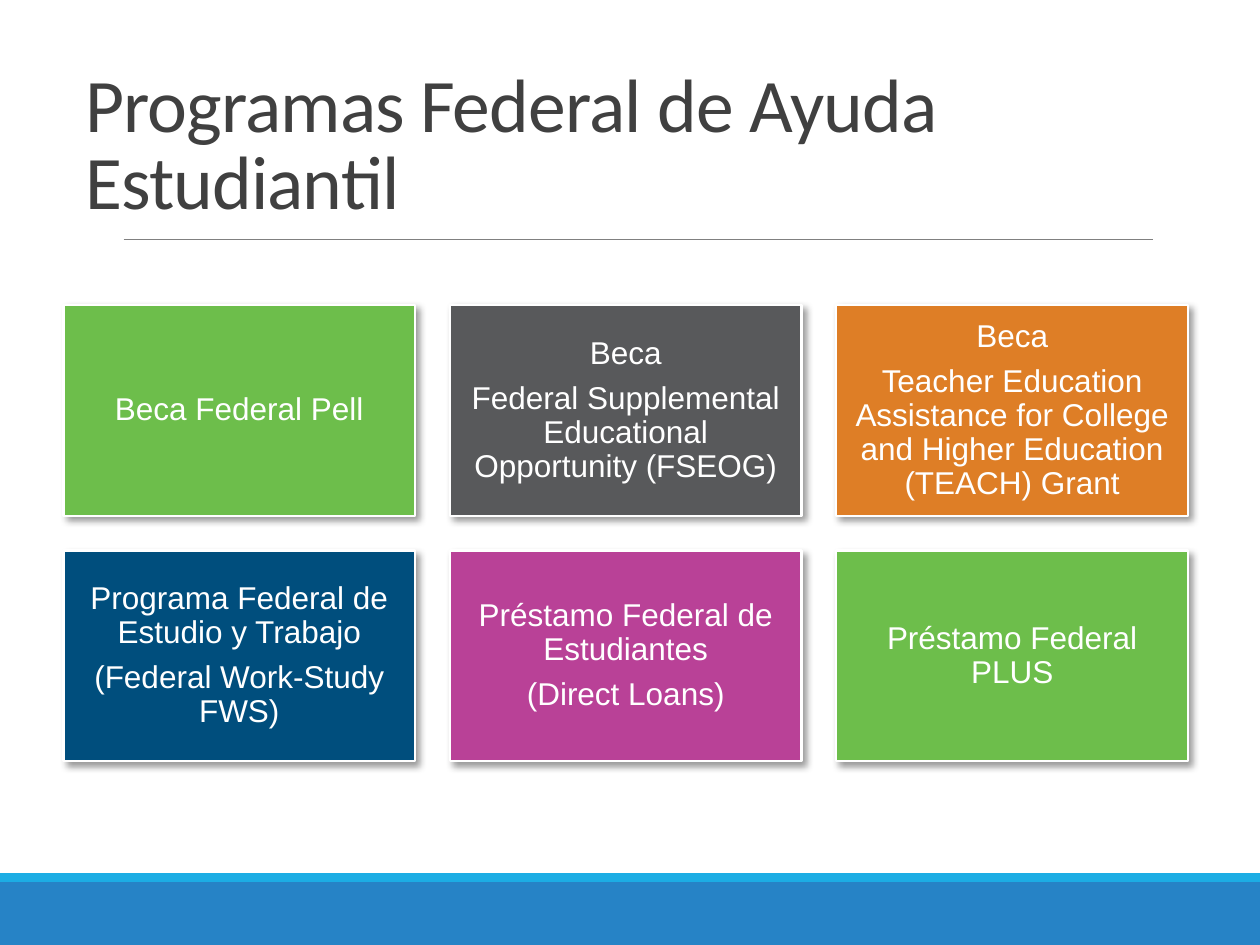
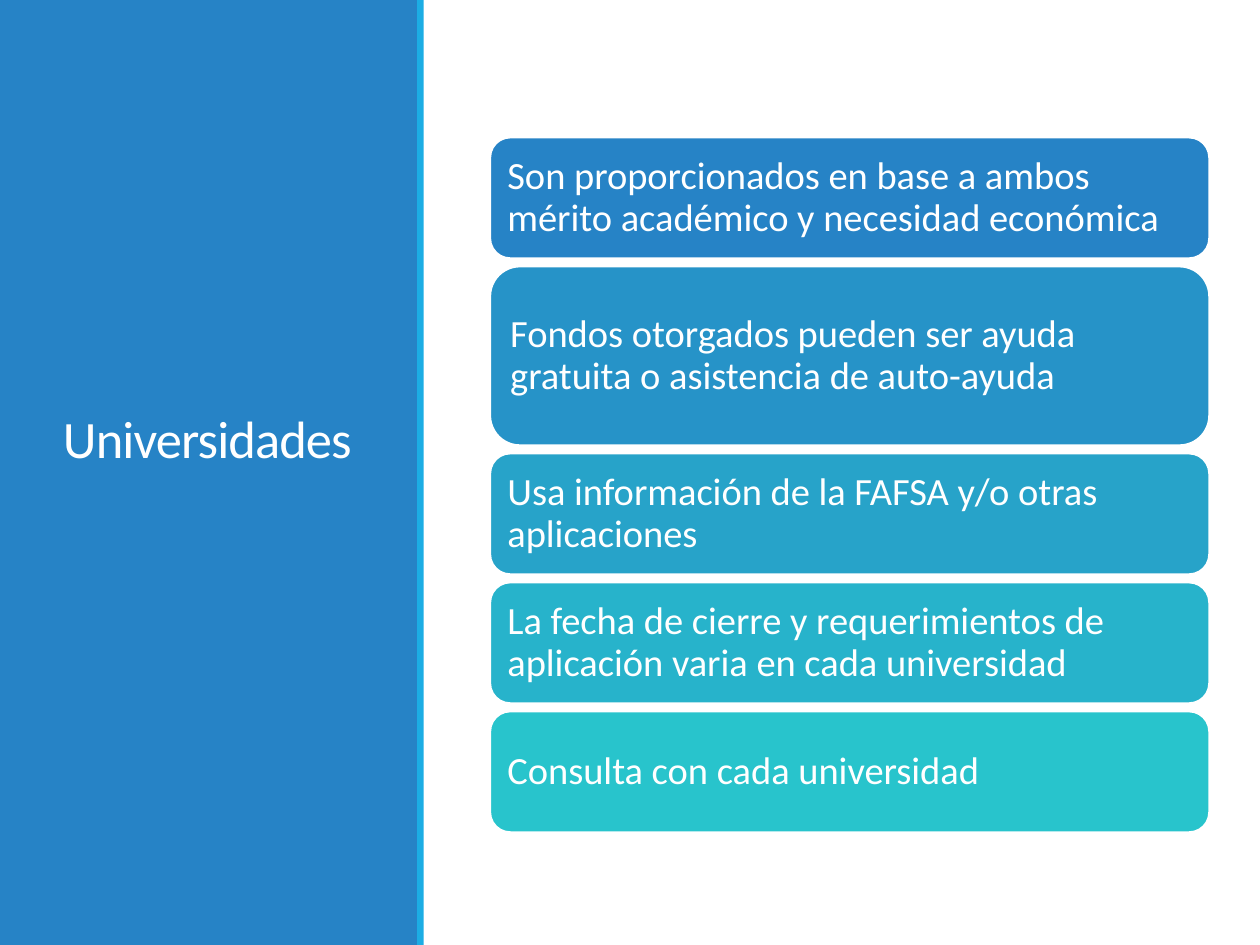
from lxml import etree
from pptx import Presentation, util as u
from pptx.dml.color import RGBColor
from pptx.enum import shapes, text
from pptx.oxml import ns

COLORS = {
    "white": "FFFFFF", "ink": "404040", "rule": "808080", "blue": "2683C6", "sky": "1CADE4",
    "green": "6DBE4B", "gray": "58595B", "orange": "DE7E26", "navy": "004E7D", "magenta": "B94197",
    "azure": "2693C8", "lagoon": "27A3C9", "turquoise": "27B3CB", "aqua": "28C4CC",
}
PAGE_WIDTH, PAGE_HEIGHT = 25.4, 19.05
EDGE_WIDTH = 1.25
SPACE_AFTER = 0.35

CARDS = [
    ("green", ["Beca Federal Pell"]),
    ("gray", ["Beca", "Federal Supplemental Educational Opportunity (FSEOG)"]),
    ("orange", ["Beca", "Teacher Education Assistance for College and Higher Education (TEACH) Grant"]),
    ("navy", ["Programa Federal de Estudio y Trabajo", "(Federal Work-Study FWS)"]),
    ("magenta", ["Préstamo Federal de Estudiantes", "(Direct Loans)"]),
    ("green", ["Préstamo Federal PLUS"]),
]
CARD_COLUMNS = 3
CARD_LEFT, CARD_TOP, CARD_WIDTH, CARD_HEIGHT, CARD_GAP = 1.28, 6.15, 7.09, 4.25, 0.7

PANEL_LEFT, PANEL_TOP, PANEL_WIDTH, PANEL_GAP = 9.88, 2.77, 14.5, 0.16
PANEL_HEIGHT, TALL_PANEL_HEIGHT = 2.44, 3.61
PANELS = [
    ("blue", PANEL_HEIGHT, "Son proporcionados en base a ambos mérito académico y necesidad económica"),
    ("azure", TALL_PANEL_HEIGHT, "Fondos otorgados pueden ser ayuda gratuita o asistencia de auto-ayuda"),
    ("lagoon", PANEL_HEIGHT, "Usa información de la FAFSA y/o otras aplicaciones"),
    ("turquoise", PANEL_HEIGHT, "La fecha de cierre y requerimientos de aplicación varia en cada universidad"),
    ("aqua", PANEL_HEIGHT, "Consulta con cada universidad"),
]


def rgb(name):
    return RGBColor.from_string(COLORS[name])


def write(box, lines, *, size, font="Calibri", color="white", align="LEFT", anchor="MIDDLE",
          spacing=0.9, tracking=None, after=SPACE_AFTER, insets=None):
    """Fill a shape with paragraphs; after is a share of the size, insets are left, top, right, bottom in cm."""
    frame = box.text_frame
    frame.word_wrap = True
    frame.vertical_anchor = text.MSO_ANCHOR[anchor]
    if insets:
        (frame.margin_left, frame.margin_top,
         frame.margin_right, frame.margin_bottom) = map(u.Cm, insets)
    for index, line in enumerate(lines):
        para = frame.add_paragraph() if index else frame.paragraphs[0]
        para.alignment = text.PP_ALIGN[align]
        para.line_spacing = spacing
        para.space_after = u.Pt(size * after)
        span = para.add_run()
        span.text = line
        span.font.size, span.font.name = u.Pt(size), font
        span.font.color.rgb = rgb(color)
        if tracking is not None:
            span.font._element.set("spc", str(round(tracking * 100)))


def add_block(page, left, top, width, height, fill, *, rounded=False, edge=None):
    kind = shapes.MSO_SHAPE.ROUNDED_RECTANGLE if rounded else shapes.MSO_SHAPE.RECTANGLE
    block = page.shapes.add_shape(kind, *map(u.Cm, (left, top, width, height)))
    block.shadow.inherit = False
    block.fill.solid()
    block.fill.fore_color.rgb = rgb(fill)
    if edge:
        block.line.color.rgb = rgb(edge)
        block.line.width = u.Pt(EDGE_WIDTH)
    else:
        block.line.fill.background()
    return block


def add_drop_shadow(block):
    effects = block._element.spPr.find(ns.qn("a:effectLst"))
    shadow = etree.SubElement(effects, ns.qn("a:outerShdw"), blurRad=str(u.Pt(4)),
                              dist=str(u.Pt(3)), dir=str(45 * 60000), algn="tl", rotWithShape="0")
    color = etree.SubElement(shadow, ns.qn("a:srgbClr"), val="000000")
    etree.SubElement(color, ns.qn("a:alpha"), val="40000")


def add_title(page, left, top, width, height, title, **style):
    box = page.shapes.add_textbox(*map(u.Cm, (left, top, width, height)))
    write(box, [title], spacing=0.85, tracking=-0.5, after=0, **style)


def add_rule(page, left, right, y):
    rule = page.shapes.add_connector(shapes.MSO_CONNECTOR.STRAIGHT, *map(u.Cm, (left, y, right, y)))
    rule.line.color.rgb = rgb("rule")
    rule.line.width = u.Pt(0.5)
    etree.SubElement(rule._element.spPr, ns.qn("a:effectLst"))


def add_card(page, index, fill, lines):
    row, column = divmod(index, CARD_COLUMNS)
    card = add_block(page, CARD_LEFT + column * (CARD_WIDTH + CARD_GAP),
                     CARD_TOP + row * (CARD_HEIGHT + CARD_GAP),
                     CARD_WIDTH, CARD_HEIGHT, fill, edge="white")
    add_drop_shadow(card)
    write(card, lines, size=18, font="Arial", align="CENTER", insets=[0.18] * 4)


def build_programs(page):
    add_block(page, 0, 17.78, PAGE_WIDTH, 1.27, "blue")
    add_block(page, 0, 17.6, PAGE_WIDTH, 0.18, "sky")
    add_rule(page, 2.49, 23.24, 4.83)
    add_title(page, 1.47, 1.7, 22.86, 2.97, "Programas Federal de Ayuda Estudiantil",
              size=43.2, color="ink", anchor="BOTTOM")
    for index, (fill, lines) in enumerate(CARDS):
        add_card(page, index, fill, lines)


def build_universities(page):
    add_block(page, 0, 0, 8.43, PAGE_HEIGHT, "blue")
    add_title(page, 1.02, 1.45, 6.43, 16.03, "Universidades", size=30,
              insets=(0.25, 0.13, 0.25, 1.22))
    add_block(page, 8.41, 0, 0.13, PAGE_HEIGHT, "sky")
    top = PANEL_TOP
    for fill, height, line in PANELS:
        panel = add_block(page, PANEL_LEFT, top, PANEL_WIDTH, height, fill, rounded=True, edge="white")
        write(panel, [line], size=22, insets=[0.23] * 4)
        top += height + PANEL_GAP


def main():
    deck = Presentation()
    deck.slide_width, deck.slide_height = u.Cm(PAGE_WIDTH), u.Cm(PAGE_HEIGHT)
    for build in (build_programs, build_universities):
        build(deck.slides.add_slide(deck.slide_layouts[6]))
    deck.save("out.pptx")


if __name__ == "__main__":
    main()
